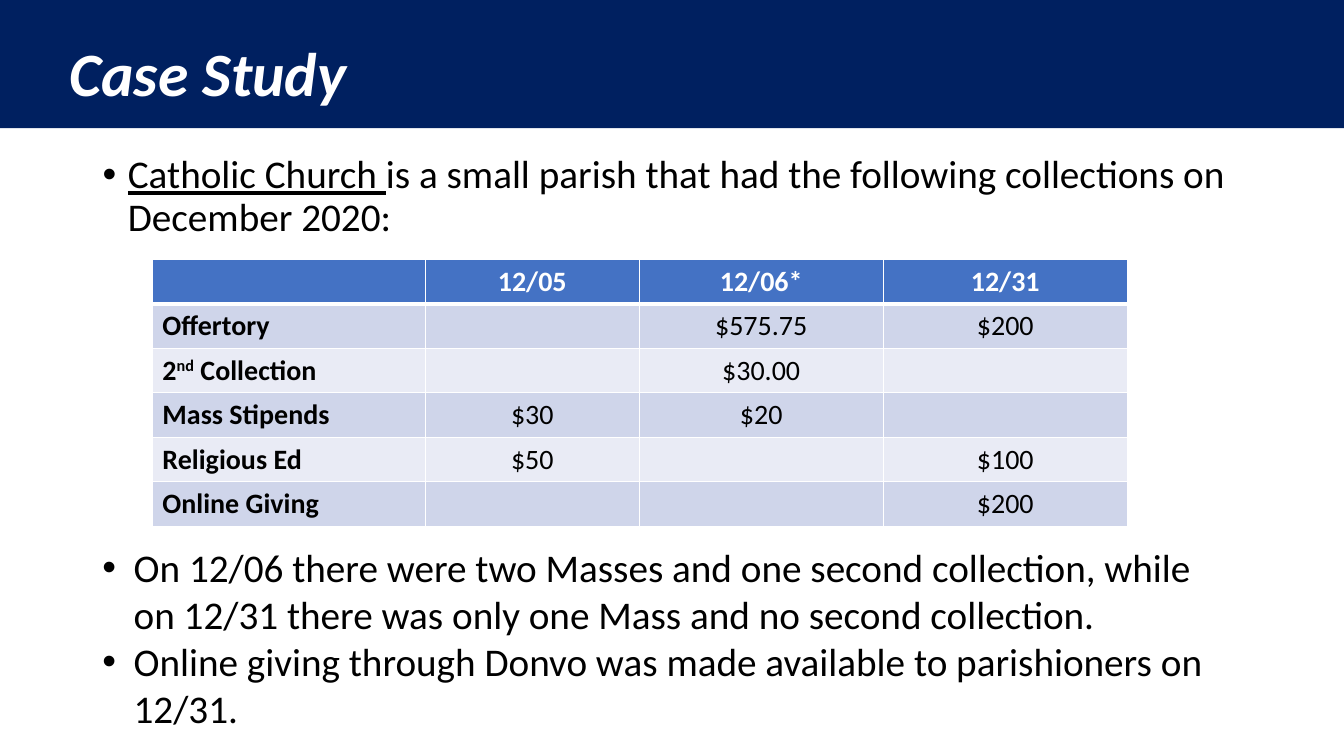
"""Build the case study slide with its table of parish collections."""
from lxml import etree
from pptx import Presentation
from pptx.dml.color import RGBColor
from pptx.enum.shapes import MSO_SHAPE
from pptx.enum.text import MSO_ANCHOR, MSO_AUTO_SIZE, PP_ALIGN
from pptx.oxml.ns import qn
from pptx.util import Cm, Pt

RECTANGLE = MSO_SHAPE.RECTANGLE
MIDDLE = MSO_ANCHOR.MIDDLE
NO_AUTOFIT = MSO_AUTO_SIZE.NONE
LEFT, CENTER = PP_ALIGN.LEFT, PP_ALIGN.CENTER

COLORS = {
    "navy": "002060",
    "header": "4472C4",
    "band_dark": "CFD5EA",
    "band_light": "E9EBF5",
    "white": "FFFFFF",
    "black": "000000",
}


def style_runs(paragraph, size, color, bold=False, italic=False):
    for run in paragraph.runs:
        font = run.font
        font.name, font.size = "Calibri", Pt(size)
        font.bold, font.italic = bold, italic
        font.color.rgb = RGBColor.from_string(COLORS[color])


def add_bullet(paragraph, indent):
    properties = paragraph._p.get_or_add_pPr()
    properties.set("marL", str(indent))
    properties.set("indent", str(-indent))
    etree.SubElement(properties, qn("a:buFont")).set("typeface", "Arial")
    etree.SubElement(properties, qn("a:buChar")).set("char", "•")


prs = Presentation()
prs.slide_width, prs.slide_height = Cm(33.87), Cm(19.05)
slide = prs.slides.add_slide(prs.slide_layouts[1])
title, intro = slide.placeholders

banner = slide.shapes.add_shape(RECTANGLE, 0, 0, prs.slide_width, Cm(3.23))
banner.shadow.inherit = False
banner.fill.solid()
banner.fill.fore_color.rgb = RGBColor.from_string(COLORS["navy"])
banner.line.fill.background()
title._element.addprevious(banner._element)

title.left, title.top, title.width, title.height = Cm(1.5), Cm(0.1), Cm(29.21), Cm(3.68)
title.text_frame.text = "Case Study"
title.text_frame.vertical_anchor = MIDDLE
title.text_frame.auto_size = NO_AUTOFIT
heading = title.text_frame.paragraphs[0]
heading.alignment = LEFT
heading.line_spacing = 0.9
style_runs(heading, 44, "white", bold=True, italic=True)

intro.left, intro.top, intro.width, intro.height = Cm(2.33), Cm(3.78), Cm(29.21), Cm(12.09)
intro.text_frame.auto_size = NO_AUTOFIT
opening = intro.text_frame.paragraphs[0]
parish = opening.add_run()
parish.text = "Catholic Church "
opening.add_run().text = "is a small parish that had the following collections on December 2020:"
opening.line_spacing = 0.9
opening.space_before = Pt(10)
add_bullet(opening, Cm(0.64))
style_runs(opening, 28, "black")
parish.font.underline = True

collections = [
    [[], ["12/05"], ["12/06*"], ["12/31"]],
    [["Offertory"], [], ["$575.75"], ["$200"]],
    [["2", "nd", " Collection"], [], ["$30.00"], []],
    [["Mass Stipends"], ["$30"], ["$20"], []],
    [["Religious Ed"], ["$50"], [], ["$100"]],
    [["Online Giving"], [], [], ["$200"]],
]
column_widths = [6.88, 5.39, 6.15, 6.15]
row_height = 1.12
table = slide.shapes.add_table(
    len(collections), len(column_widths), Cm(3.84), Cm(6.54),
    Cm(sum(column_widths)), Cm(row_height * len(collections)),
).table
for column, width in zip(table.columns, column_widths):
    column.width = Cm(width)

for r, row in enumerate(collections):
    table.rows[r].height = Cm(row_height)
    fill_color = "header" if r == 0 else "band_dark" if r % 2 else "band_light"
    for c, pieces in enumerate(row):
        cell = table.cell(r, c)
        for side in "LRTB":
            thick = (r, side) in [(0, "B"), (1, "T")]
            border = etree.SubElement(cell._tc.get_or_add_tcPr(), qn(f"a:ln{side}"))
            border.set("w", str(Pt(3 if thick else 1)))
            border_fill = etree.SubElement(border, qn("a:solidFill"))
            etree.SubElement(border_fill, qn("a:srgbClr")).set("val", COLORS["white"])
        cell.fill.solid()
        cell.fill.fore_color.rgb = RGBColor.from_string(COLORS[fill_color])
        entry = cell.text_frame.paragraphs[0]
        entry.alignment = CENTER if c else LEFT
        for piece in pieces:
            run = entry.add_run()
            run.text = piece
            if piece == "nd":
                run._r.get_or_add_rPr().set("baseline", "30000")
        style_runs(entry, 20, "black" if r else "white", bold=r == 0 or c == 0)

remarks = [
    "On 12/06 there were two Masses and one second collection, "
    "while on 12/31 there was only one Mass and no second collection.",
    "Online giving through Donvo was made available to parishioners on 12/31.",
]
notes = slide.shapes.add_textbox(Cm(2.33), Cm(13.56), Cm(28.78), Cm(5.05)).text_frame
notes.word_wrap = True
notes.text = "\n".join(remarks)
for remark in notes.paragraphs:
    add_bullet(remark, Cm(0.79))
    style_runs(remark, 28, "black")

prs.save("out.pptx")
